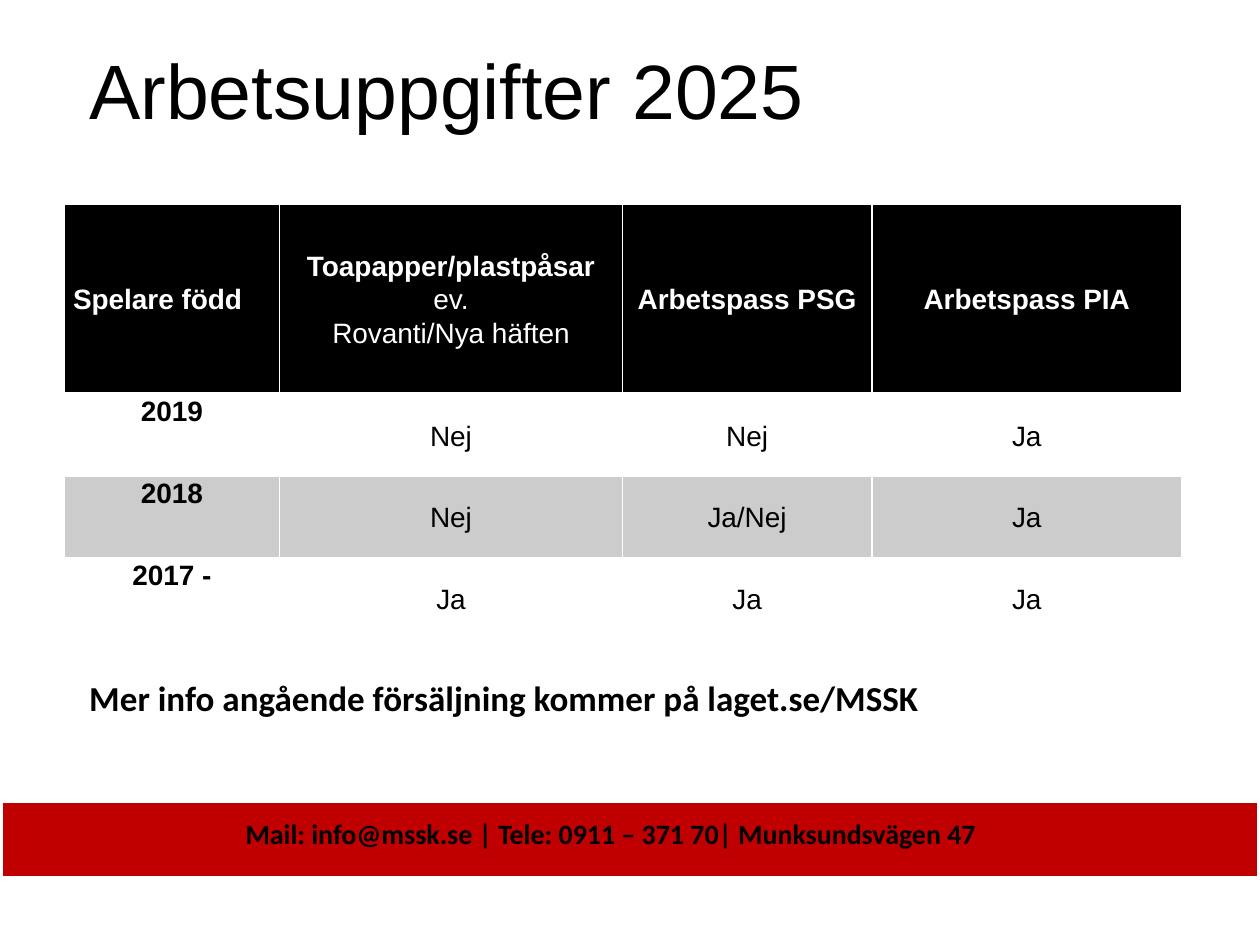
from dataclasses import dataclass

from lxml import etree
from pptx import Presentation
from pptx.dml.color import RGBColor
from pptx.enum.shapes import MSO_SHAPE
from pptx.enum.text import MSO_ANCHOR, PP_ALIGN
from pptx.oxml.ns import qn
from pptx.util import Inches, Pt

RECT = MSO_SHAPE.RECTANGLE
TOP, MIDDLE = MSO_ANCHOR.TOP, MSO_ANCHOR.MIDDLE
LEFT, CENTER = PP_ALIGN.LEFT, PP_ALIGN.CENTER


@dataclass(frozen=True)
class Theme:
    black: str = "000000"
    white: str = "FFFFFF"
    grey: str = "CCCCCC"
    red: str = "C00000"
    sans: str = "Arial"
    human: str = "Calibri"
    title: int = 44
    note: int = 20
    body: int = 16


THEME = Theme()
COLS = [1.71, 2.72, 1.98, 2.46]
ROWS = [1.51, 0.65, 0.65, 0.65]
DUTIES = [
    ["Spelare född", "Toapapper/plastpåsar\nev.\nRovanti/Nya häften",
     "Arbetspass PSG", "Arbetspass PIA"],
    ["2019", "Nej", "Nej", "Ja"],
    ["2018", "Nej", "Ja/Nej", "Ja"],
    ["2017 -", "Ja", "Ja", "Ja"],
]


def rgb(code):
    return RGBColor.from_string(code)


def style(para, face, size, bold=False, color=THEME.black):
    font = para.font
    font.name, font.size, font.bold = face, Pt(size), bold
    font.color.rgb = rgb(color)


def add_text(slide, box, text, face, size, bold=False):
    frame = slide.shapes.add_textbox(*map(Inches, box)).text_frame
    frame.word_wrap = True
    frame.vertical_anchor = TOP
    para = frame.paragraphs[0]
    para.text = text
    style(para, face, size, bold)
    return frame


def add_title(slide, box):
    add_text(slide, box, "Arbetsuppgifter 2025", THEME.sans, THEME.title)


def edge(cell, side, width):
    """Draw one white border; sides must come in the order L, R, T, B."""
    line = etree.SubElement(cell._tc.get_or_add_tcPr(), qn("a:ln" + side),
                            w=str(Pt(width)))
    fill = etree.SubElement(line, qn("a:solidFill"))
    etree.SubElement(fill, qn("a:srgbClr"), val=THEME.white)


def fill_cell(cell, text, row, col):
    head = row == 0
    for side in "LRTB":
        thick = (head and side == "B") or (row == 1 and side == "T")
        edge(cell, side, 3 if thick else 1)
    cell.fill.solid()
    back = THEME.black if head else (THEME.white, THEME.grey)[row % 2 == 0]
    cell.fill.fore_color.rgb = rgb(back)
    cell.margin_left = cell.margin_right = Inches(0.07)
    cell.margin_top = cell.margin_bottom = 0
    cell.vertical_anchor = MIDDLE if head or col else TOP
    cell.text = text
    for i, para in enumerate(cell.text_frame.paragraphs):
        para.alignment = LEFT if head and col == 0 else CENTER
        para.line_spacing = 1.07
        style(para, THEME.sans, THEME.body, i == 0 and (head or col == 0),
              THEME.white if head else THEME.black)


def add_duties(slide, box):
    table = slide.shapes.add_table(len(ROWS), len(COLS), *map(Inches, box)).table
    table.first_row = table.horz_banding = False
    for col, width in zip(table.columns, COLS):
        col.width = Inches(width)
    for r, (height, texts) in enumerate(zip(ROWS, DUTIES)):
        table.rows[r].height = Inches(height)
        for c, text in enumerate(texts):
            fill_cell(table.cell(r, c), text, r, c)


def add_note(slide, box):
    frame = add_text(slide, box,
                     "Mer info angående försäljning kommer på laget.se/MSSK",
                     THEME.human, THEME.note, True)
    para = frame.paragraphs[0]
    para.line_spacing, para.space_after = Pt(12), Pt(11.4)


def add_footer(slide, box):
    left, top, width, height = box
    bar = slide.shapes.add_shape(RECT, *map(Inches, box))
    bar.shadow.inherit = False
    bar.fill.solid()
    bar.fill.fore_color.rgb = rgb(THEME.red)
    bar.line.color.rgb = rgb(THEME.white)
    bar.line.width = Pt(3.75)
    add_text(slide, (left + 1.85, top + 0.08, 7.09, 0.39),
             "Mail: info@mssk.se | Tele: 0911 – 371 70| Munksundsvägen 47",
             THEME.human, THEME.body, True)


def main():
    deck = Presentation()
    deck.slide_width, deck.slide_height = Inches(10), Inches(7.5)
    slide = deck.slides.add_slide(deck.slide_layouts[6])
    add_footer(slide, (0, 6.35, 10, 0.63))
    add_title(slide, (0.61, 0.29, 8.92, 1.08))
    add_duties(slide, (0.51, 1.62, sum(COLS), sum(ROWS)))
    add_note(slide, (0.61, 5.49, 7.68, 0.3))
    deck.save("out.pptx")


if __name__ == "__main__":
    main()
